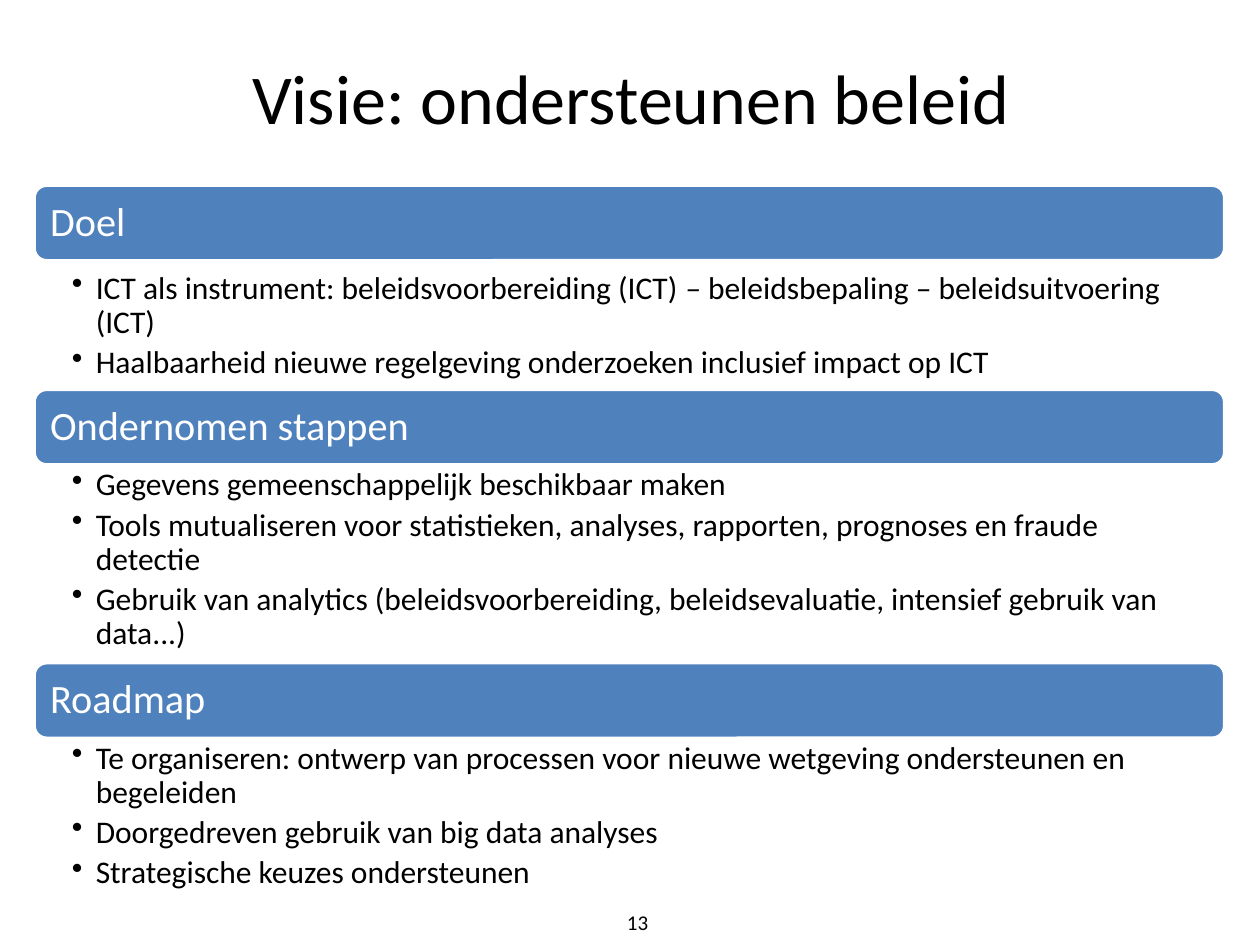
from dataclasses import dataclass

from lxml.etree import SubElement
from pptx import Presentation
from pptx.dml.color import RGBColor as Rgb
from pptx.enum.shapes import MSO_SHAPE as Shape
from pptx.enum.text import MSO_ANCHOR as Anchor, PP_ALIGN as Align
from pptx.oxml.ns import qn
from pptx.util import Inches, Pt


@dataclass(frozen=True)
class Theme:
    font: str = "Calibri"
    blue: Rgb = Rgb(0x4F, 0x81, 0xBD)
    white: Rgb = Rgb(0xFF, 0xFF, 0xFF)
    black: Rgb = Rgb(0, 0, 0)
    title: int = 40
    head: int = 23
    body: int = 18
    small: int = 12


THEME = Theme()
LEFT, WIDTH, BAR = 0.27, 9.45, 0.6

# heading, bar top, list top, list height, items (each a list of (text, italic) runs)
PARTS = [
    ("Doel", 1.47, 2.13, 0.96, [
        [("ICT als instrument: beleidsvoorbereiding (ICT) ", False),
         ("–", True),
         (" beleidsbepaling – beleidsuitvoering (ICT)", False)],
        [("Haalbaarheid nieuwe regelgeving onderzoeken inclusief impact op ICT", False)],
    ]),
    ("Ondernomen stappen", 3.09, 3.69, 1.56, [
        [("Gegevens gemeenschappelijk beschikbaar maken", False)],
        [("Tools mutualiseren voor statistieken, analyses, rapporten, "
          "prognoses en fraude detectie", False)],
        [("Gebruik van analytics (beleidsvoorbereiding, beleidsevaluatie, "
          "intensief gebruik van data...)", False)],
    ]),
    ("Roadmap", 5.26, 5.86, 1.3, [
        [("Te organiseren: ontwerp van processen voor nieuwe wetgeving "
          "ondersteunen en begeleiden", False)],
        [("Doorgedreven gebruik van big data analyses", False)],
        [("Strategische keuzes ondersteunen", False)],
    ]),
]


def set_frame(shape, insets, anchor):
    """Set wrap, anchor and insets (left, top, right, bottom)."""
    frame = shape.text_frame
    frame.word_wrap = True
    frame.vertical_anchor = anchor
    (frame.margin_left, frame.margin_top,
     frame.margin_right, frame.margin_bottom) = map(Inches, insets)
    return frame


def add_run(para, text, size, color, italic=False):
    run = para.add_run()
    run.text = text
    font = run.font
    font.name, font.size, font.italic = THEME.font, Pt(size), italic
    font.color.rgb = color


def add_label(slide, box, text, size):
    """Add one centred line of text."""
    label = slide.shapes.add_textbox(*map(Inches, box))
    para = set_frame(label, (0.1, 0.05, 0.1, 0.05), Anchor.MIDDLE).paragraphs[0]
    para.alignment = Align.CENTER
    add_run(para, text, size, THEME.black)


def add_bar(slide, box, text):
    bar = slide.shapes.add_shape(Shape.ROUNDED_RECTANGLE, *map(Inches, box))
    bar.shadow.inherit = False
    bar.fill.solid()
    bar.fill.fore_color.rgb = THEME.blue
    bar.line.color.rgb = THEME.white
    bar.line.width = Pt(2)
    para = set_frame(bar, (0.1,) * 4, Anchor.MIDDLE).paragraphs[0]
    para.alignment = Align.LEFT
    para.line_spacing = 0.9
    add_run(para, text, THEME.head, THEME.white)


def add_list(slide, box, items):
    area = slide.shapes.add_textbox(*map(Inches, box))
    frame = set_frame(area, (0.3, 0.03, 0.18, 0.03), Anchor.TOP)
    for i, runs in enumerate(items):
        para = frame.add_paragraph() if i else frame.paragraphs[0]
        props = para._p.get_or_add_pPr()
        props.set("marL", str(Inches(0.19)))
        props.set("indent", str(Inches(-0.19)))
        SubElement(props, qn("a:buChar")).set("char", "•")
        para.level = 1
        para.line_spacing = 0.9
        para.space_after = Pt(0.2 * THEME.body)
        for text, italic in runs:
            add_run(para, text, THEME.body, THEME.black, italic)


def main():
    deck = Presentation()
    deck.slide_width, deck.slide_height = Inches(10), Inches(7.5)
    slide = deck.slides.add_slide(deck.slide_layouts[6])
    add_label(slide, (0.28, 0.14, WIDTH, 1.25), "Visie: ondersteunen beleid", THEME.title)
    for head, top, start, height, items in PARTS:
        add_bar(slide, (LEFT, top, WIDTH, BAR), head)
        add_list(slide, (LEFT, start, WIDTH, height), items)
    add_label(slide, (4.65, 7.14, 0.82, 0.36), "13", THEME.small)
    deck.save("out.pptx")


if __name__ == "__main__":
    main()
